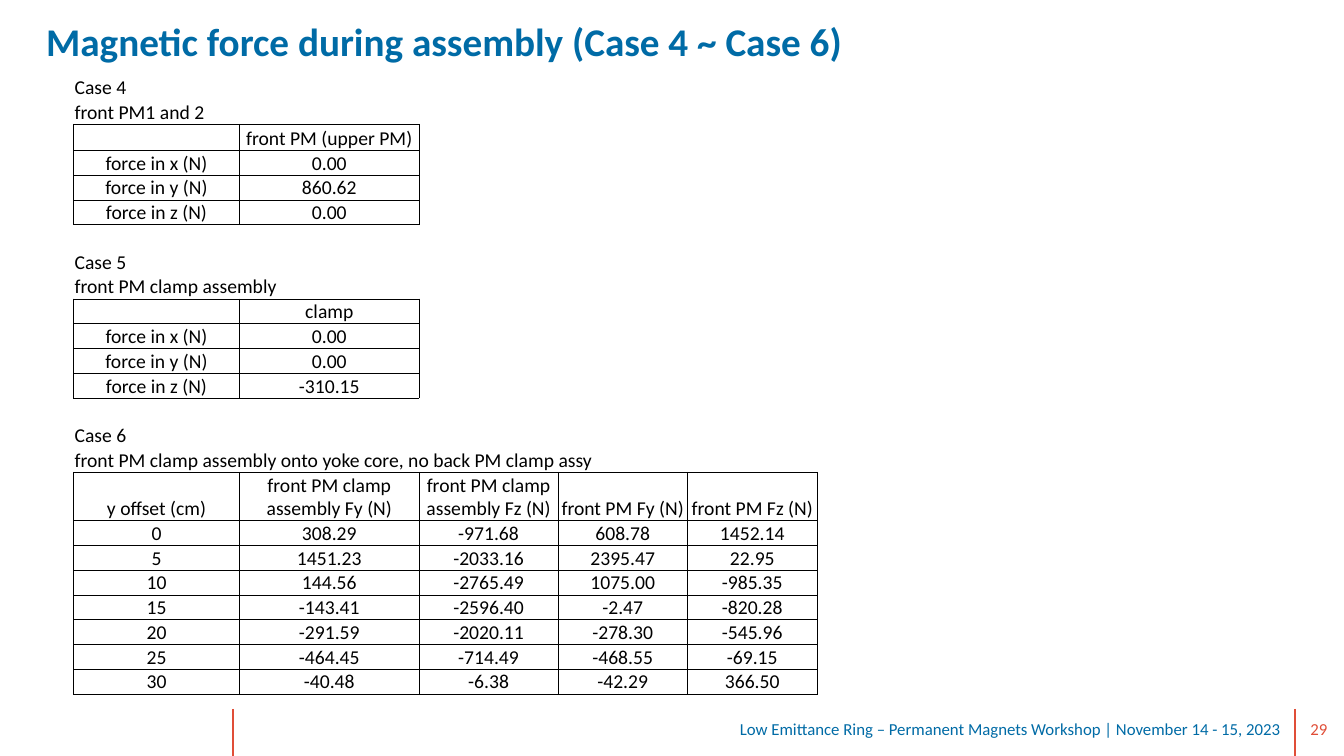
import lxml.etree
import pptx
import pptx.dml.color
import pptx.enum.shapes
import pptx.enum.text
import pptx.oxml.ns
import pptx.util

Cm = pptx.util.Cm
Pt = pptx.util.Pt
ALIGN = pptx.enum.text.PP_ALIGN
ANCHOR = pptx.enum.text.MSO_ANCHOR
BLUE, RED, BLACK = "006BA6", "E04E38", "000000"
FONT = "Calibri"
NO_STYLE = "{2D5ABB26-0587-4C30-8999-92F81FD0307C}"
COLS = [4.19, 4.52, 3.51, 1.12, 2.13, 3.28]
FORCES = ["force in x (N)", "force in y (N)", "force in z (N)"]
OFFSETS = [
    ["y offset (cm)", "front PM clamp assembly Fy (N)",
     "front PM clamp assembly Fz (N)", "front PM Fy (N)", "front PM Fz (N)"],
    ["0", "308.29", "-971.68", "608.78", "1452.14"],
    ["5", "1451.23", "-2033.16", "2395.47", "22.95"],
    ["10", "144.56", "-2765.49", "1075.00", "-985.35"],
    ["15", "-143.41", "-2596.40", "-2.47", "-820.28"],
    ["20", "-291.59", "-2020.11", "-278.30", "-545.96"],
    ["25", "-464.45", "-714.49", "-468.55", "-69.15"],
    ["30", "-40.48", "-6.38", "-42.29", "366.50"],
]


def color(code):
    return pptx.dml.color.RGBColor.from_string(code)


def style(para, size, code, align=ALIGN.LEFT, bold=False):
    para.alignment = align
    for run in para.runs:
        run.font.name = FONT
        run.font.size = Pt(size)
        run.font.bold = bold
        run.font.color.rgb = color(code)


def place(shape, left, top, width, height):
    shape.left, shape.top = Cm(left), Cm(top)
    shape.width, shape.height = Cm(width), Cm(height)


def add_title(slide, text):
    title = slide.shapes.title
    place(title, 0.91, 0.3, 28.3, 1.45)
    frame = title.text_frame
    frame.text = text
    frame.auto_size = pptx.enum.text.MSO_AUTO_SIZE.NONE
    frame.vertical_anchor = ANCHOR.TOP
    style(frame.paragraphs[0], 28, BLUE, bold=True)


def add_label(slide, text, box, code, align, top, wrap):
    label = slide.shapes.add_textbox(*[Cm(size) for size in box])
    frame = label.text_frame
    frame.text = text
    frame.word_wrap = wrap
    frame.vertical_anchor = ANCHOR.MIDDLE
    frame.margin_left = frame.margin_right = frame.margin_bottom = Cm(0.25)
    frame.margin_top = Cm(top)
    style(frame.paragraphs[0], 12, code, align)


def add_rule(slide, left):
    rule = slide.shapes.add_connector(
        pptx.enum.shapes.MSO_CONNECTOR.STRAIGHT,
        Cm(left), Cm(17.86), Cm(left), Cm(19.05))
    rule.line.color.rgb = color(RED)
    rule.line.width = Pt(1.5)
    lxml.etree.SubElement(
        rule._element.spPr, pptx.oxml.ns.qn("a:effectLst"))


def frame_cell(cell):
    props = cell._tc.get_or_add_tcPr()
    for side in ("lnL", "lnR", "lnT", "lnB"):
        props.append(pptx.oxml.parse_xml(
            f'<a:{side} {pptx.oxml.ns.nsdecls("a")} w="{Pt(0.5)}">'
            f'<a:solidFill><a:srgbClr val="{BLACK}"/></a:solidFill></a:{side}>'))


def fill_cell(cell, text, align):
    cell.margin_left = cell.margin_right = cell.margin_top = Cm(0.03)
    cell.margin_bottom = 0
    cell.vertical_anchor = ANCHOR.BOTTOM
    cell.fill.background()
    para = cell.text_frame.paragraphs[0]
    para.text = text
    style(para, 14, BLACK, align)
    if not text:
        lxml.etree.SubElement(
            para._p, pptx.oxml.ns.qn("a:endParaRPr"), sz="1400")


def force_case(name, note, head, values):
    return [[name], [note], ["", head]] + [
        list(pair) for pair in zip(FORCES, values)]


def add_forces(slide):
    rows = (
        force_case("Case 4", "front PM1 and 2", "front PM (upper PM)",
                   ["0.00", "860.62", "0.00"])
        + [[]]
        + force_case("Case 5", "front PM clamp assembly", "clamp",
                     ["0.00", "0.00", "-310.15"])
        + [[], ["Case 6"],
           ["front PM clamp assembly onto yoke core, no back PM clamp assy"]]
        + OFFSETS)
    spans = {8: [(0, 1), (2, 3)], 15: [(0, 4)]}
    heights = {2: 0.66, 16: 1.18}
    holder = slide.shapes.add_table(
        len(rows), len(COLS), Cm(1.85), Cm(1.88), Cm(sum(COLS)), Cm(15.44))
    table = holder.table
    table.first_row = table.horz_banding = False
    table._tbl.tblPr.find(pptx.oxml.ns.qn("a:tableStyleId")).text = NO_STYLE
    for col, width in zip(table.columns, COLS):
        col.width = Cm(width)
    for y, texts in enumerate(rows):
        table.rows[y].height = Cm(heights.get(y, 0.59))
        wide = len(texts) == 5
        if wide:
            texts = texts[:4] + [""] + texts[4:]
        grid = len(texts) if len(texts) > 1 else 0
        for x in range(len(COLS)):
            cell = table.cell(y, x)
            if x < grid:
                frame_cell(cell)
            text = texts[x] if x < len(texts) else ""
            fill_cell(cell, text, ALIGN.CENTER if grid else ALIGN.LEFT)
        for start, end in spans.get(y, [(3, 4) if wide else (2, 3)]):
            table.cell(y, start).merge(table.cell(y, end))
    holder.height = Cm(15.44)


def main():
    deck = pptx.Presentation()
    deck.slide_width, deck.slide_height = Cm(33.87), Cm(19.05)
    slide = deck.slides.add_slide(deck.slide_layouts[5])
    for left in (32.64, 5.87):
        add_rule(slide, left)
    add_title(slide, "Magnetic force during assembly (Case 4 ~ Case 6)")
    add_label(slide, "29", (32.49, 17.91, 1.5, 1.02), RED,
              ALIGN.CENTER, 0.13, True)
    add_forces(slide)
    add_label(slide, "Low Emittance Ring – Permanent Magnets Workshop | "
              "November 14 - 15, 2023", (18.21, 17.86, 14.33, 1.02), BLUE,
              ALIGN.RIGHT, 0.25, False)
    deck.save("out.pptx")


if __name__ == "__main__":
    main()
